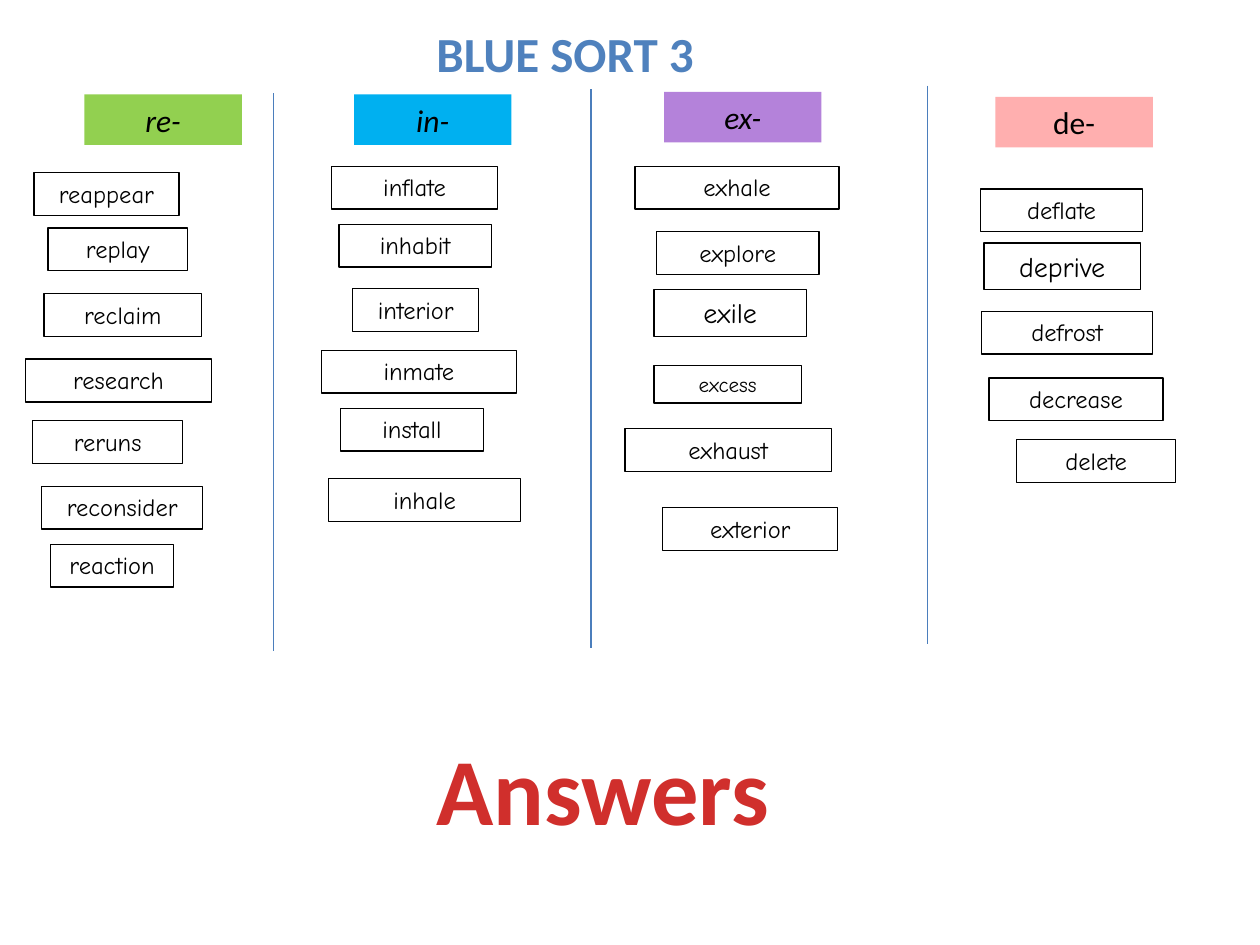
from lxml.etree import SubElement
from pptx import Presentation
from pptx.dml.color import RGBColor
from pptx.enum.shapes import MSO_CONNECTOR as LINE, MSO_SHAPE as SHAPE
from pptx.enum.text import MSO_ANCHOR as ANCHOR, MSO_AUTO_SIZE as FIT, PP_ALIGN as ALIGN
from pptx.oxml.ns import qn
from pptx.util import Pt

PX = 9144  # 100 px to the inch
TOP = 70
HEIGHTS = {12: 30, 14: 34, 16: 37}  # card height by text size

# Prefix, italic, fill, column left, header offset, divider top (None: no
# divider), then cards: word, offset x, offset y, width and text size
COLUMNS = [
    ("re-", True, "92D050", 0, (67, 5), None, [
        ("reappear", 27, 67, 115, 14),
        ("replay", 38, 111, 111, 14),
        ("reclaim", 35, 163, 125, 14),
        ("research", 20, 215, 148, 14),
        ("reruns", 26, 264, 119, 14),
        ("reconsider", 33, 316, 128, 14),
        ("reaction", 40, 362, 98, 14),
    ]),
    ("in-", True, "00B0F0", 217, (64, 5), 4, [
        ("inflate", 46, 62, 132, 14),
        ("inhabit", 52, 108, 121, 14),
        ("interior", 63, 159, 100, 14),
        ("inmate", 38, 208, 155, 14),
        ("install", 53, 254, 114, 14),
        ("inhale", 44, 310, 152, 14),
    ]),
    ("ex-", True, "B482DA", 469, (58, 3), 1, [
        ("exhale", 35, 62, 162, 14),
        ("explore", 52, 114, 129, 14),
        ("exile", 50, 160, 121, 16),
        ("excess", 50, 220, 117, 12),
        ("exhaust", 27, 270, 164, 14),
        ("exterior", 57, 333, 139, 14),
    ]),
    ("de-", False, "FFAFAF", 736, (54, 7), -2, [
        ("deflate", 42, 80, 129, 14),
        ("deprive", 45, 123, 124, 16),
        ("defrost", 43, 177, 136, 14),
        ("decrease", 49, 230, 138, 14),
        ("delete", 71, 279, 126, 14),
    ]),
]


def px(*nums):
    return [n * PX for n in nums]


def color(code):
    return RGBColor.from_string(code)


def write(shape, text, size, face="Calibri", hue="000000",
          bold=False, italic=False, wrap=True):
    frame = shape.text_frame
    frame.word_wrap = wrap
    frame.auto_size = FIT.SHAPE_TO_FIT_TEXT
    frame.vertical_anchor = ANCHOR.TOP
    para = frame.paragraphs[0]
    para.alignment = ALIGN.CENTER
    run = para.add_run()
    run.text = text
    font = run.font
    font.name, font.size = face, Pt(size)
    font.bold, font.italic = bold, italic
    font.color.rgb = color(hue)


def add_box(slide, box, fill=None, edge=None):
    shape = slide.shapes.add_shape(SHAPE.RECTANGLE, *px(*box))
    shape.shadow.inherit = False
    if fill:
        shape.fill.solid()
        shape.fill.fore_color.rgb = color(fill)
    else:
        shape.fill.background()
    if edge:
        shape.line.color.rgb = color(edge)
        shape.line.width = Pt(0.75)
    else:
        shape.line.fill.background()
    return shape


def add_rule(slide, x, y, length):
    rule = slide.shapes.add_connector(LINE.STRAIGHT, *px(x, y, x, y + length))
    rule.line.color.rgb = color("4B7EBC")
    rule.line.width = Pt(0.75)
    SubElement(rule._element.spPr, qn("a:effectLst"))


def add_title(slide, box):
    title = slide.shapes.title
    title.left, title.top, title.width, title.height = px(*box)
    write(title, "BLUE SORT 3", 28, hue="4F81BD", bold=True)


def add_column(slide, left, top, prefix, italic, fill, head, rule, cards):
    # Divider on the column's left edge
    if rule is not None:
        add_rule(slide, left, top + rule, 443)
    # Prefix header
    dx, dy = head
    header = add_box(slide, (left + dx, top + dy, 125, 40), fill=fill)
    write(header, prefix, 18, italic=italic)
    # Word cards
    for word, dx, dy, width, size in cards:
        box = (left + dx, top + dy, width, HEIGHTS[size])
        card = add_box(slide, box, edge="000000")
        write(card, word, size, "Comic Neue")


def add_footer(slide, box):
    label = slide.shapes.add_textbox(*px(*box))
    write(label, "Answers", 54, hue="D02F2C", bold=True, wrap=False)


def main():
    deck = Presentation()
    deck.slide_width, deck.slide_height = px(1000, 750)
    slide = deck.slides.add_slide(deck.slide_layouts[5])
    add_title(slide, (218, 14, 461, 57))
    for prefix, italic, fill, left, head, rule, cards in COLUMNS:
        add_column(slide, left, TOP, prefix, italic, fill, head, rule, cards)
    add_footer(slide, (335, 575, 287, 101))
    deck.save("out.pptx")


if __name__ == "__main__":
    main()
